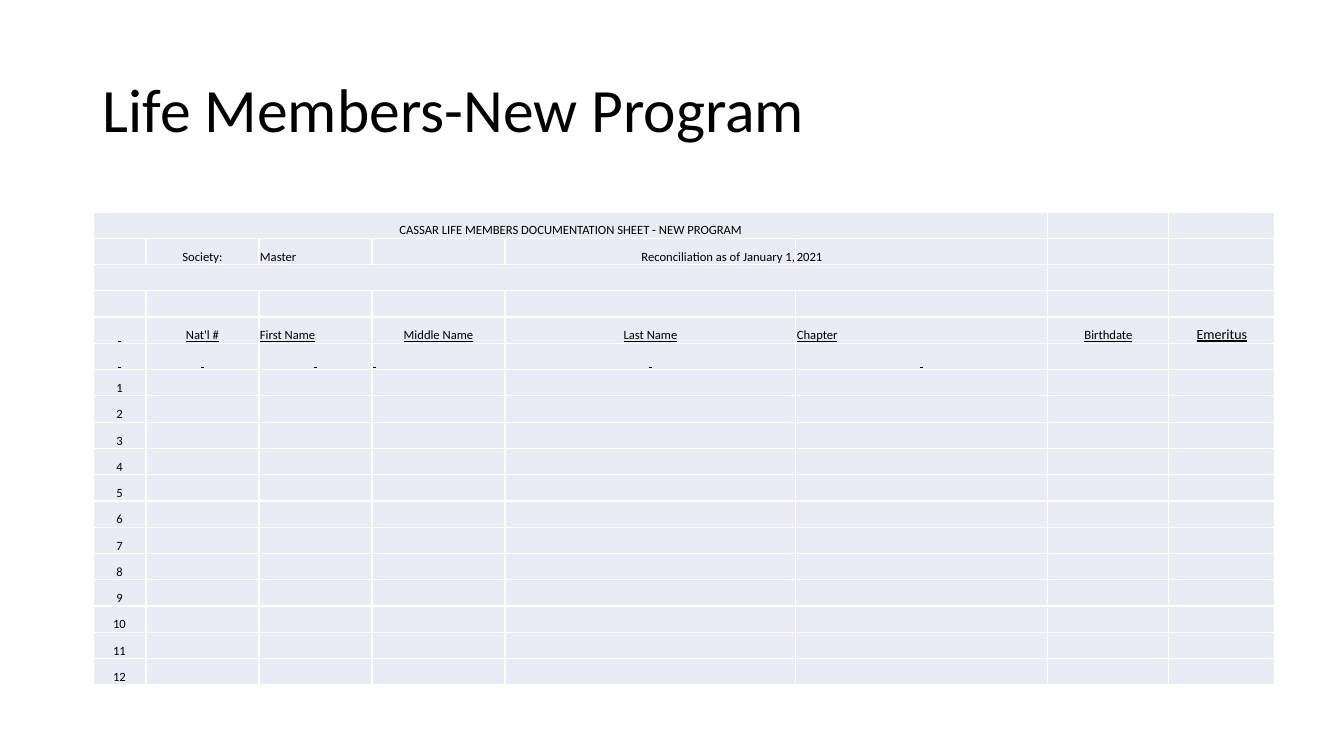
import lxml.etree
import pptx
import pptx.dml.color
import pptx.enum.text
import pptx.oxml.ns
import pptx.util

# Content
TITLE = "Life Members-New Program"
FONT, INK, CELL_FILL, GRID = "Calibri", "000000", "E9EBF5", "FFFFFF"
BLANK = " "  # a non-breaking space, which shows its underline
COLUMN_WIDTHS = [53, 113, 113, 133, 291, 252, 121, 106]
SHEET_TITLE = "CASSAR LIFE MEMBERS DOCUMENTATION SHEET - NEW PROGRAM"
SOCIETY = ["", "Society:", "Master", "", "Reconciliation as of January 1,", "2021"]
HEADINGS = [BLANK, "Nat'l #", "First Name", "Middle Name", "Last Name",
            "Chapter", "Birthdate", "Emeritus"]
MEMBERS = 12
ROWS = [[SHEET_TITLE], SOCIETY, [], [], HEADINGS, [BLANK] * 6]
ROWS += [[str(n)] for n in range(1, MEMBERS + 1)]
MERGED_ROWS, MERGED_COLUMNS = (0, 2), 6
HEADING_ROW, RULE_ROW = 4, 5
ALIGN = {1: "cclcrl", 4: "cclcclcc", 5: "ccclcc"}

# Lengths in px
SLIDE_W, SLIDE_H = 1344, 756
TITLE_BOX = (93, 40, 1159, 146)
TABLE_LEFT, TABLE_TOP, TABLE_HEIGHT = 93, 212, 473
CELL_MARGIN = 1

PP = pptx.enum.text.PP_ALIGN
ALIGNMENTS = {"l": PP.LEFT, "c": PP.CENTER, "r": PP.RIGHT}
ANCHOR = pptx.enum.text.MSO_ANCHOR


def px(n):
    return pptx.util.Emu(round(n * 914400 / 100.8))


def color(value):
    return pptx.dml.color.RGBColor.from_string(value)


def add_run(p, text, size):
    r = p.add_run()
    r.text = text
    r.font.name = FONT
    r.font.size = pptx.util.Pt(size)
    r.font.color.rgb = color(INK)
    return r


def add_element(parent, tag, **attributes):
    return lxml.etree.SubElement(parent, pptx.oxml.ns.qn(tag), **attributes)


def style_cell(cell):
    cell.margin_left = cell.margin_right = cell.margin_top = px(CELL_MARGIN)
    cell.margin_bottom = 0
    cell.vertical_anchor = ANCHOR.BOTTOM
    for side in ("a:lnL", "a:lnR", "a:lnT", "a:lnB"):
        line = add_element(cell._tc.tcPr, side, w=str(pptx.util.Pt(1)))
        add_element(add_element(line, "a:solidFill"), "a:srgbClr", val=GRID)
    cell.fill.solid()
    cell.fill.fore_color.rgb = color(CELL_FILL)


prs = pptx.Presentation()
prs.slide_width, prs.slide_height = px(SLIDE_W), px(SLIDE_H)
s = prs.slides.add_slide(prs.slide_layouts[6])

# Title
tf = s.shapes.add_textbox(*map(px, TITLE_BOX)).text_frame
tf.word_wrap = True
tf.vertical_anchor = ANCHOR.MIDDLE
p = tf.paragraphs[0]
p.line_spacing = 0.9
add_run(p, TITLE, 44)

# Documentation sheet
table = s.shapes.add_table(len(ROWS), len(COLUMN_WIDTHS), px(TABLE_LEFT), px(TABLE_TOP),
                           px(sum(COLUMN_WIDTHS)), px(TABLE_HEIGHT)).table
table.first_row = table.horz_banding = False
for column, width in zip(table.columns, COLUMN_WIDTHS):
    column.width = px(width)
for row in table.rows:
    row.height = px(TABLE_HEIGHT / len(ROWS))
for i in MERGED_ROWS:
    table.cell(i, 0).merge(table.cell(i, MERGED_COLUMNS - 1))

for i, texts in enumerate(ROWS):
    for j in range(len(COLUMN_WIDTHS)):
        cell = table.cell(i, j)
        style_cell(cell)
        p = cell.text_frame.paragraphs[0]
        text = texts[j] if j < len(texts) else ""
        if text:
            p.alignment = ALIGNMENTS[ALIGN.get(i, "c")[j]]
            r = add_run(p, text, 10 if text == "Emeritus" else 9)
            r.font.underline = i in (HEADING_ROW, RULE_ROW)
            r.font.bold = i == RULE_ROW
        else:
            add_element(p._p, "a:endParaRPr", sz="900")

prs.save("out.pptx")
